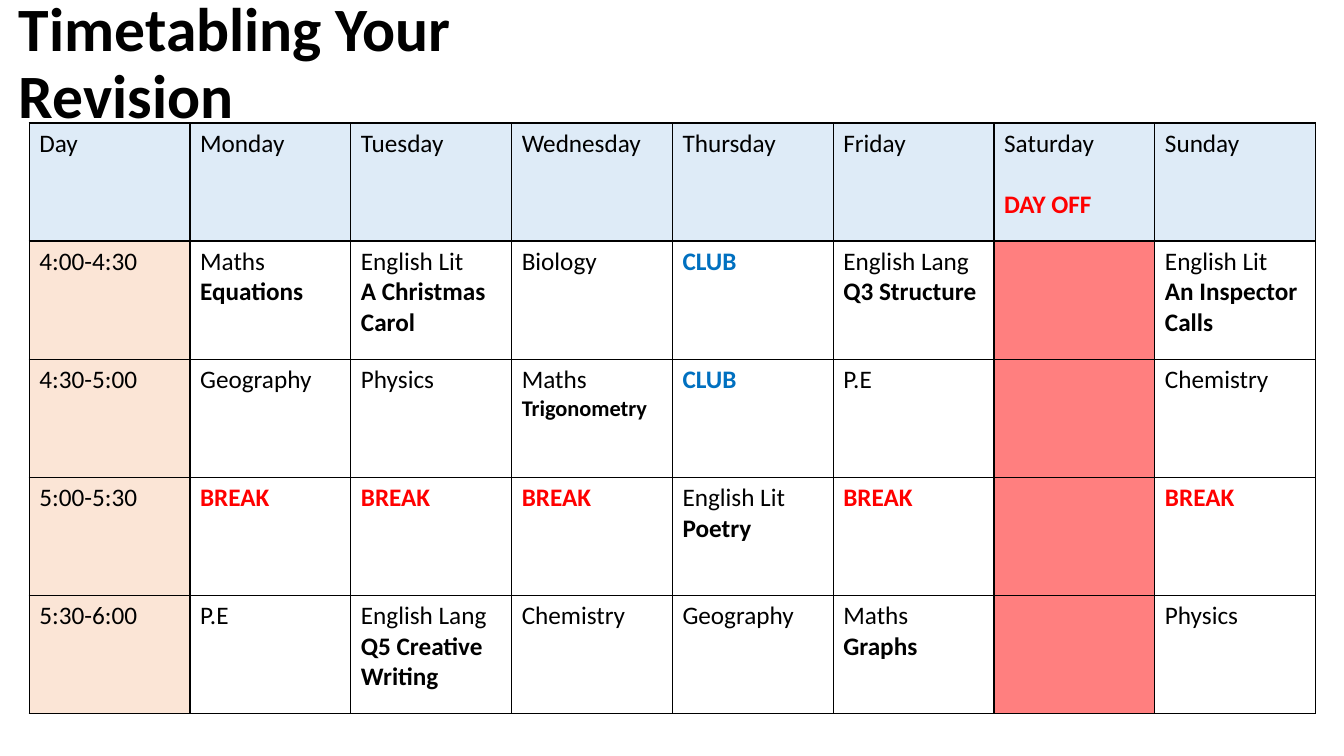
from lxml import etree
from pptx import Presentation
from pptx import util as u
from pptx.dml.color import RGBColor
from pptx.enum import text
from pptx.oxml import ns

BLACK, RED, BLUE = "000000", "FF0000", "0070C0"
HEADER_FILL, TIME_FILL = "DEEBF7", "FBE5D6"
LINE_HEIGHT = 22

TIMETABLE = [
    ["Day", "Monday", "Tuesday", "Wednesday", "Thursday", "Friday",
     "Saturday\nDAY OFF", "Sunday"],
    ["4:00-4:30", "Maths\nEquations", "English Lit\nA Christmas Carol", "Biology",
     "CLUB", "English Lang\nQ3 Structure", "", "English Lit\nAn Inspector Calls"],
    ["4:30-5:00", "Geography", "Physics", "Maths\nTrigonometry",
     "CLUB", "P.E", "", "Chemistry"],
    ["5:00-5:30", "BREAK", "BREAK", "BREAK",
     "English Lit\nPoetry", "BREAK", "", "BREAK"],
    ["5:30-6:00", "P.E", "English Lang\nQ5 Creative Writing", "Chemistry",
     "Geography", "Maths\nGraphs", "", "Physics"],
]
HIGHLIGHTS = {
    "DAY OFF": {"color": RED, "before": LINE_HEIGHT},
    "BREAK": {"color": RED},
    "CLUB": {"color": BLUE},
    "Trigonometry": {"size": 16},
}


def rgb(value):
    return RGBColor.from_string(value)


def write(paragraph, wording, size=18, color=BLACK, bold=False, before=0, spacing=None):
    run = paragraph.add_run()
    run.text = wording
    run.font.name = "Calibri"
    run.font.size = u.Pt(size)
    run.font.bold = bold
    run.font.color.rgb = rgb(color)
    if before:
        paragraph.space_before = u.Pt(before)
    if spacing:
        paragraph.line_spacing = spacing


def add_title(slide, wording):
    title = slide.shapes.add_textbox(
        u.Inches(0.09), u.Inches(0.26), u.Inches(6.57), u.Inches(0.77))
    title.text_frame.word_wrap = True
    title.text_frame.vertical_anchor = text.MSO_ANCHOR.MIDDLE
    write(title.text_frame.paragraphs[0], wording, size=44, bold=True, spacing=0.9)


def add_borders(cell):
    properties = cell._tc.get_or_add_tcPr()
    for side in ("a:lnL", "a:lnR", "a:lnT", "a:lnB"):
        border = etree.SubElement(properties, ns.qn(side), w=str(u.Pt(1)))
        solid = etree.SubElement(border, ns.qn("a:solidFill"))
        etree.SubElement(solid, ns.qn("a:srgbClr"), val=BLACK)


def fill_cell(cell, color=None, opacity=100):
    if color is None:
        cell.fill.background()
        return
    cell.fill.solid()
    cell.fill.fore_color.rgb = rgb(color)
    if opacity < 100:
        shade = cell._tc.tcPr.find(ns.qn("a:solidFill")).find(ns.qn("a:srgbClr"))
        etree.SubElement(shade, ns.qn("a:alpha"), val=str(opacity * 1000))


def write_entry(cell, entry):
    for index, wording in enumerate(entry.split("\n")):
        frame = cell.text_frame
        paragraph = frame.add_paragraph() if index else frame.paragraphs[0]
        highlight = HIGHLIGHTS.get(wording, {})
        write(paragraph, wording, bold=index > 0 or bool(highlight), **highlight)


def add_timetable(slide, entries):
    days = len(entries[0])
    timetable = slide.shapes.add_table(
        len(entries), days, u.Inches(0.29), u.Inches(1.22),
        u.Inches(12.76), u.Inches(5.86)).table
    for column in timetable.columns:
        column.width = u.Inches(12.76 / days)
    for r, row in enumerate(entries):
        for c, entry in enumerate(row):
            cell = timetable.cell(r, c)
            add_borders(cell)
            if r == 0:
                fill_cell(cell, HEADER_FILL)
            elif c == 0:
                fill_cell(cell, TIME_FILL)
            elif not entry:
                fill_cell(cell, RED, opacity=50)
            else:
                fill_cell(cell)
            if entry:
                write_entry(cell, entry)


def main():
    deck = Presentation()
    deck.slide_width, deck.slide_height = u.Inches(13.33), u.Inches(7.5)
    slide = deck.slides.add_slide(deck.slide_layouts[6])
    add_title(slide, "Timetabling Your Revision")
    add_timetable(slide, TIMETABLE)
    deck.save("out.pptx")


if __name__ == "__main__":
    main()
